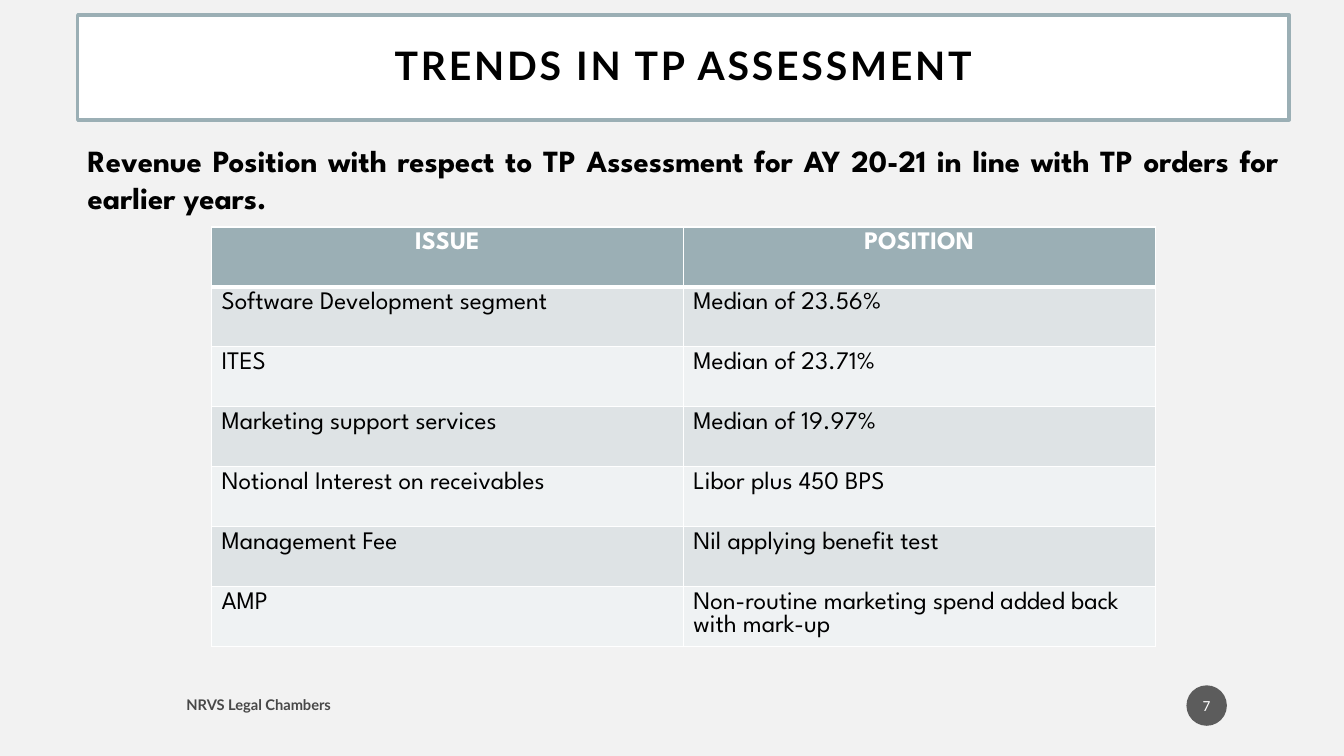
from dataclasses import dataclass

from lxml import etree
from pptx import Presentation
from pptx.dml.color import RGBColor
from pptx.enum.shapes import MSO_SHAPE
from pptx.enum.text import MSO_ANCHOR, PP_ALIGN
from pptx.oxml.ns import qn
from pptx.util import Cm, Length, Pt

RECTANGLE, OVAL = MSO_SHAPE.RECTANGLE, MSO_SHAPE.OVAL
TOP, MIDDLE = MSO_ANCHOR.TOP, MSO_ANCHOR.MIDDLE
LEFT, CENTER, JUSTIFY = PP_ALIGN.LEFT, PP_ALIGN.CENTER, PP_ALIGN.JUSTIFY

COLORS = {
    "page": "F2F2F2",
    "white": "FFFFFF",
    "black": "000000",
    "accent": "9BAFB5",
    "badge": "1D1D1D",
    "odd_row": "DEE3E5",
    "even_row": "EFF2F3",
}
ISSUES = [
    ("ISSUE", "POSITION"),
    ("Software Development segment", "Median of 23.56%"),
    ("ITES", "Median of 23.71%"),
    ("Marketing support services", "Median of 19.97%"),
    ("Notional Interest on receivables", "Libor plus 450 BPS"),
    ("Management Fee", "Nil applying benefit test"),
    ("AMP", "Non-routine marketing spend added back with mark-up"),
]
COLUMN_WIDTH, ROW_HEIGHT = 11.89, 1.51
TABLE_LINE = Pt(16.5)


@dataclass
class TextStyle:
    font: str
    size: float
    color: str = "black"
    bold: bool = True
    align: PP_ALIGN = LEFT
    line_spacing: float | Length = 1.0
    letter_spacing: float = 0
    opacity: int = 100


@dataclass
class TextItem:
    text: str
    left: float
    top: float
    width: float
    height: float
    style: TextStyle
    anchor: MSO_ANCHOR = MIDDLE
    inset_x: float = 0.25
    inset_y: float = 0.13
    shape: MSO_SHAPE | None = None
    fill: str = "white"
    fill_opacity: int = 100
    line: str | None = None


ITEMS = [
    TextItem("TRENDS IN TP ASSESSMENT", 1.96, 0.38, 30.53, 2.64,
             TextStyle("Lato", 28, align=CENTER, line_spacing=0.9, letter_spacing=2),
             inset_x=0.51, inset_y=0.51, shape=RECTANGLE, line="accent"),
    TextItem("Revenue Position with respect to TP Assessment for AY 20-21 "
             "in line with TP orders for earlier years.", 1.96, 3.45, 30.53, 14.33,
             TextStyle("League Spartan", 22, align=JUSTIFY), anchor=TOP),
    TextItem("NRVS Legal Chambers", 4.45, 17.32, 16.38, 0.89,
             TextStyle("Lato", 10.5, opacity=70)),
    TextItem("7", 29.9, 17.27, 1.02, 1.02,
             TextStyle("Calibri", 11, "white", bold=False, align=CENTER),
             inset_x=0.05, shape=OVAL, fill="badge", fill_opacity=70),
]


def rgb(name: str) -> RGBColor:
    return RGBColor.from_string(COLORS[name])


def set_opacity(element, percent: int) -> None:
    """Make the first solid colour inside the element translucent."""
    if percent < 100:
        color = element.find(qn("a:solidFill")).find(qn("a:srgbClr"))
        etree.SubElement(color, qn("a:alpha"), val=str(percent * 1000))


def write_text(frame, text: str, style: TextStyle) -> None:
    para = frame.paragraphs[0]
    para.alignment = style.align
    para.line_spacing = style.line_spacing
    span = para.add_run()
    span.text = text
    font = para.font
    font.name, font.size, font.bold = style.font, Pt(style.size), style.bold
    # Colour and tracking sit on the run
    span.font.color.rgb = rgb(style.color)
    properties = span.font._element
    set_opacity(properties, style.opacity)
    if style.letter_spacing:
        properties.set("spc", str(int(style.letter_spacing * 100)))


def draw_item(page, item: TextItem) -> None:
    area = Cm(item.left), Cm(item.top), Cm(item.width), Cm(item.height)
    if item.shape is None:
        box = page.shapes.add_textbox(*area)
    else:
        box = page.shapes.add_shape(item.shape, *area)
        box.shadow.inherit = False
        box.fill.solid()
        box.fill.fore_color.rgb = rgb(item.fill)
        set_opacity(box._element.spPr, item.fill_opacity)
        if item.line:
            box.line.color.rgb = rgb(item.line)
            box.line.width = Pt(2.5)
        else:
            box.line.fill.background()
    frame = box.text_frame
    frame.word_wrap = True
    frame.vertical_anchor = item.anchor
    frame.margin_left = frame.margin_right = Cm(item.inset_x)
    frame.margin_top = frame.margin_bottom = Cm(item.inset_y)
    write_text(frame, item.text, item.style)


def set_border(cell, side: str, points: float) -> None:
    line = etree.SubElement(cell._tc.get_or_add_tcPr(), qn(f"a:ln{side}"), w=str(Pt(points)))
    fill = etree.SubElement(line, qn("a:solidFill"))
    etree.SubElement(fill, qn("a:srgbClr"), val=COLORS["white"])


def draw_table(page) -> None:
    rows, columns = len(ISSUES), len(ISSUES[0])
    table = page.shapes.add_table(rows, columns, Cm(5.33), Cm(5.72),
                                  Cm(COLUMN_WIDTH * columns), Cm(ROW_HEIGHT * rows)).table
    header = TextStyle("League Spartan", 18, "white", align=CENTER, line_spacing=TABLE_LINE)
    body = TextStyle("League Spartan", 18, bold=False, line_spacing=TABLE_LINE)
    for row, texts in enumerate(ISSUES):
        fill = "accent" if row == 0 else "odd_row" if row % 2 else "even_row"
        for column, text in enumerate(texts):
            cell = table.cell(row, column)
            # The rule under the header is thicker than the others
            widths = {"L": 1, "R": 1, "T": 3 if row == 1 else 1, "B": 3 if row == 0 else 1}
            for side, points in widths.items():
                set_border(cell, side, points)
            cell.fill.solid()
            cell.fill.fore_color.rgb = rgb(fill)
            write_text(cell.text_frame, text, body if row else header)


def main() -> None:
    deck = Presentation()
    deck.slide_width, deck.slide_height = Cm(33.87), Cm(19.05)
    page = deck.slides.add_slide(deck.slide_layouts[6])
    page.background.fill.solid()
    page.background.fill.fore_color.rgb = rgb("page")

    # Title, statement, footer and page number
    for item in ITEMS:
        draw_item(page, item)

    # Issues and positions
    draw_table(page)
    deck.save("out.pptx")


if __name__ == "__main__":
    main()
